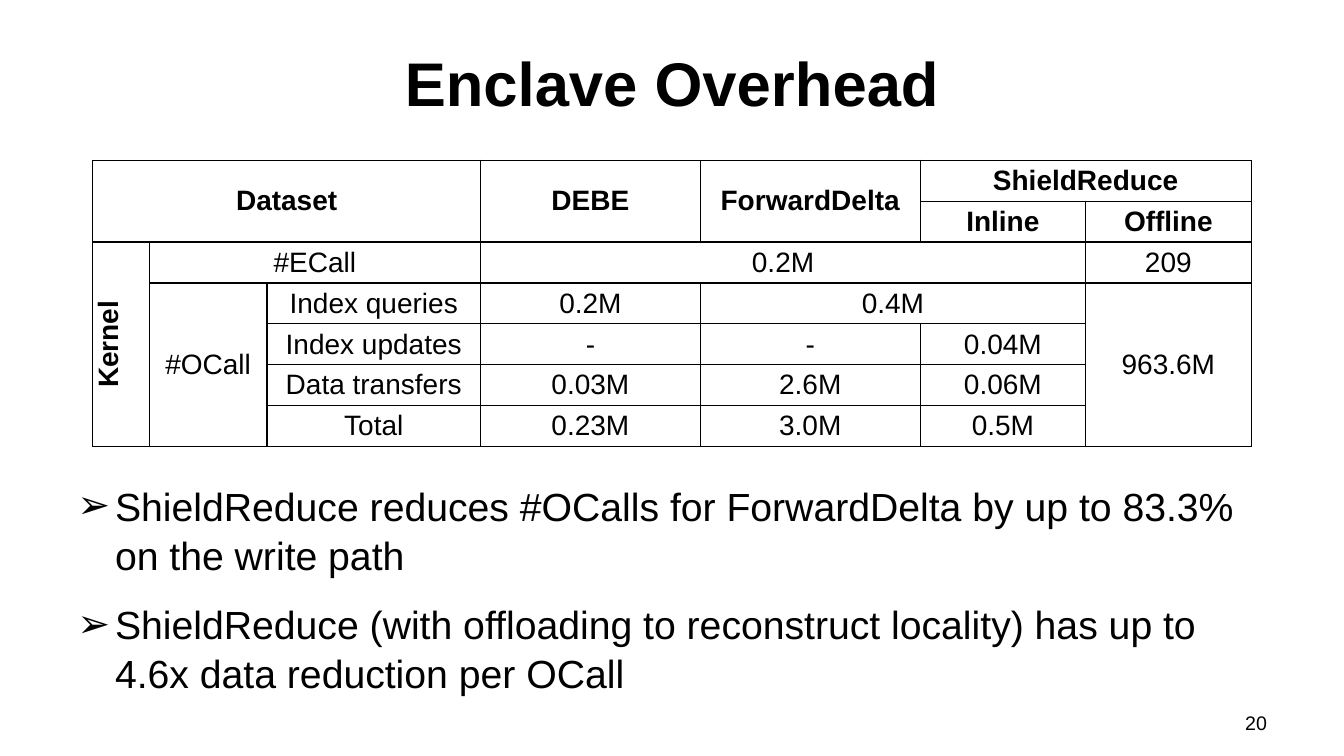
from pptx import Presentation
from pptx.dml.color import RGBColor as RGB
from pptx.enum.text import MSO_ANCHOR as Anchor, PP_ALIGN as Align
from pptx.oxml import parse_xml
from pptx.oxml.ns import nsdecls
from pptx.util import Cm, Pt

COLORS = {"ink": "000000", "paper": "FFFFFF"}
WIDTHS = [1.42, 2.97, 5.38, 5.54, 5.54, 4.17, 4.17]
ROWS, ROW_H = 7, 1.03

# row, column, row span, column span, text
HEADS = [
    (0, 0, 2, 3, "Dataset"),
    (0, 3, 2, 1, "DEBE"),
    (0, 4, 2, 1, "ForwardDelta"),
    (0, 5, 1, 2, "ShieldReduce"),
    (1, 5, 1, 1, "Inline"),
    (1, 6, 1, 1, "Offline"),
    (2, 0, 5, 1, "Kernel"),
]
CALLS = [
    (2, 1, 1, 2, "#ECall"),
    (2, 3, 1, 3, "0.2M"),
    (2, 6, 1, 1, "209"),
    (3, 1, 4, 1, "#OCall"),
    (3, 2, 1, 1, "Index queries"),
    (3, 3, 1, 1, "0.2M"),
    (3, 4, 1, 2, "0.4M"),
    (3, 6, 4, 1, "963.6M"),
]
COUNTS = [
    ("Index updates", "-", "-", "0.04M"),
    ("Data transfers", "0.03M", "2.6M", "0.06M"),
    ("Total", "0.23M", "3.0M", "0.5M"),
]
POINTS = [
    "ShieldReduce reduces #OCalls for ForwardDelta by up to 83.3% on the write path",
    "ShieldReduce (with offloading to reconstruct locality) has up to 4.6x data reduction per OCall",
]


class Deck:
    def __init__(self, slide, font="Arial"):
        self.slide = slide
        self.font = font

    def style(self, para, size, align, bold=False):
        para.alignment = align
        font = para.font
        font.name, font.size, font.bold = self.font, Pt(size), bold
        font.color.rgb = RGB.from_string(COLORS["ink"])

    def text(self, box, lines, size, align=Align.LEFT, bold=False, anchor=Anchor.TOP):
        frame = self.slide.shapes.add_textbox(*map(Cm, box)).text_frame
        frame.word_wrap = True
        frame.vertical_anchor = anchor
        frame.text = "\n".join(lines)
        for para in frame.paragraphs:
            self.style(para, size, align, bold)
        return frame

    def bullets(self, box, lines, size):
        for para in self.text(box, lines, size).paragraphs:
            para.space_before = Pt(size / 2)
            para.line_spacing = 1.05
            props = para._p.get_or_add_pPr()
            props.set("marL", str(Cm(0.95)))
            props.set("indent", str(-Cm(0.95)))
            for mark in (f'buFont {nsdecls("a")} typeface="{self.font}"',
                         f'buChar {nsdecls("a")} char="➢"'):
                props.append(parse_xml(f"<a:{mark}/>"))

    def grid(self, left, top):
        """Add an empty table with plain cells and thin borders."""
        table = self.slide.shapes.add_table(
            ROWS, len(WIDTHS), Cm(left), Cm(top),
            Cm(sum(WIDTHS)), Cm(ROWS * ROW_H)).table
        table.first_row = table.horz_banding = False
        for col, width in zip(table.columns, WIDTHS):
            col.width = Cm(width)
        for row in table.rows:
            row.height = Cm(ROW_H)
        for cell in table.iter_cells():
            cell.margin_left = cell.margin_right = 0
            cell.margin_top = cell.margin_bottom = 0
            self.border(cell)
            cell.fill.solid()
            cell.fill.fore_color.rgb = RGB.from_string(COLORS["paper"])
        return table

    def border(self, cell):
        props = cell._tc.get_or_add_tcPr()
        for side in "LRTB":
            props.append(parse_xml(
                f'<a:ln{side} {nsdecls("a")} w="{Pt(1)}"><a:solidFill>'
                f'<a:srgbClr val="{COLORS["ink"]}"/></a:solidFill></a:ln{side}>'))

    def fill(self, table, items, bold=False):
        """Write each item in its cell, merged over its spans."""
        for row, col, down, over, text in items:
            cell = table.cell(row, col)
            if down * over > 1:
                cell.merge(table.cell(row + down - 1, col + over - 1))
            cell.text = text
            cell.vertical_anchor = Anchor.MIDDLE
            self.style(cell.text_frame.paragraphs[0], 20, Align.CENTER, bold)


def main():
    prs = Presentation()
    prs.slide_width, prs.slide_height = Cm(33.87), Cm(19.05)
    deck = Deck(prs.slides.add_slide(prs.slide_layouts[6]))

    deck.text((1.7, 0.48, 30.48, 3.18), ["Enclave Overhead"], 44,
              Align.CENTER, True, Anchor.MIDDLE)
    deck.bullets((1.7, 11.96, 30.48, 6.7), POINTS, 28)
    deck.text((24.28, 17.78, 7.9, 0.89), ["20"], 14, Align.RIGHT)

    table = deck.grid(2.34, 4.04)
    deck.fill(table, HEADS, bold=True)
    deck.fill(table, CALLS)
    deck.fill(table, [(row, col, 1, 1, text)
                      for row, line in enumerate(COUNTS, 4)
                      for col, text in enumerate(line, 2)])
    table.cell(2, 0)._tc.get_or_add_tcPr().set("vert", "vert270")

    prs.save("out.pptx")


if __name__ == "__main__":
    main()
